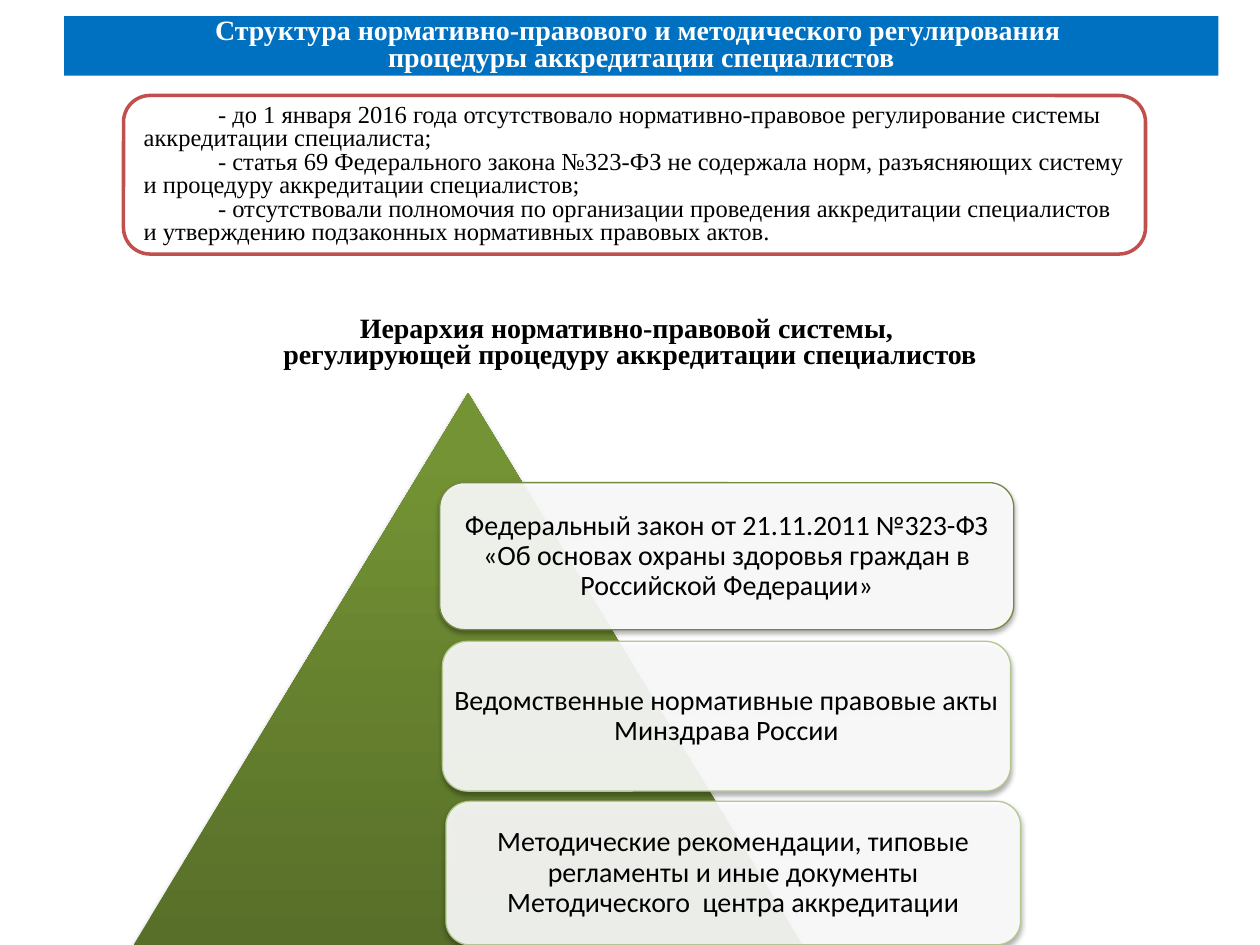
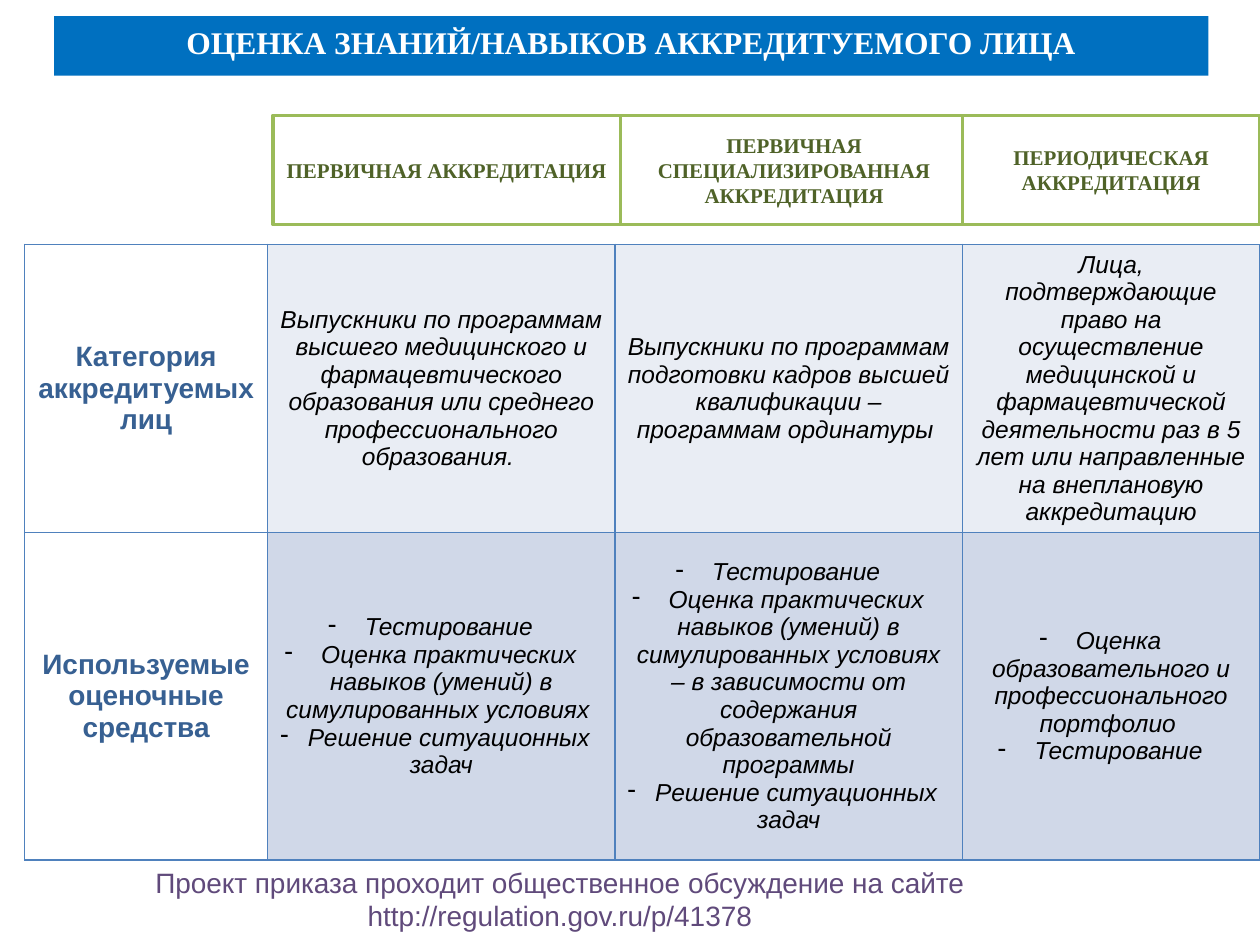
"""Builds two slides on the regulation and stages of specialist accreditation."""
from lxml.etree import SubElement
from pptx import Presentation
from pptx.dml.color import RGBColor
from pptx.enum.shapes import MSO_SHAPE as Form
from pptx.enum.text import MSO_ANCHOR as Anchor, PP_ALIGN as Align
from pptx.oxml import parse_xml
from pptx.oxml.ns import nsdecls, qn
from pptx.util import Pt

COLORS = {
    "white": "FFFFFF", "black": "000000", "band": "0070C0", "frame": "C0504D",
    "slope_dark": "586F29", "slope_light": "749334",
    "law": "738A42", "acts": "B3C791", "stage": "9BBB59", "stage_text": "4F6228",
    "grid": "4F81BD", "row_title": "376092", "people": "E9EDF4", "tools": "D0D8E8",
    "site": "604A7B",
}
TIMES = {"name": "Times New Roman", "size": Pt(16), "bold": True}
BODY = {"name": "Times New Roman", "size": Pt(14)}
LEVEL = {"name": "Calibri", "size": Pt(16)}
STAGE = {"name": "Times New Roman", "size": Pt(12), "bold": True}
ROW_TITLE = {"name": "Arial", "size": Pt(16), "bold": True}
CELL = {"name": "Arial", "size": Pt(14), "bold": False, "italic": True}
SITE = {"name": "Arial", "size": Pt(16)}


def rgb(color):
    return RGBColor.from_string(COLORS[color])


def line_xml(tag, color, width):
    return parse_xml(
        f'<a:{tag} {nsdecls("a")} w="{Pt(width)}"><a:solidFill>'
        f'<a:srgbClr val="{COLORS[color]}"/></a:solidFill></a:{tag}>')


class Deck:
    """Holds the shared style and the slide being filled."""

    def __init__(self, width, height):
        self.show = Presentation()
        self.show.slide_width, self.show.slide_height = Pt(width), Pt(height)
        self.slide = None

    def next_slide(self):
        self.slide = self.show.slides.add_slide(self.show.slide_layouts[6])

    def put_text(self, frame, paragraphs, style, color, align=Align.CENTER,
                 spacing=None, first_indent=None, bullet=None, outline=None):
        frame.word_wrap = True
        for number, words in enumerate(paragraphs):
            paragraph = frame.add_paragraph() if number else frame.paragraphs[0]
            layout = {"alignment": align, "line_spacing": spacing}
            for key, value in layout.items():
                setattr(paragraph, key, value)
            props = paragraph._p.get_or_add_pPr()
            if first_indent:
                props.set("marL", "0")
                props.set("indent", str(Pt(first_indent)))
            if bullet:
                SubElement(props, qn("a:buChar")).set("char", bullet)
            run = paragraph.add_run()
            run.text = words
            for key, value in style.items():
                setattr(run.font, key, value)
            run.font.color.rgb = rgb(color)
            if outline:
                run._r.get_or_add_rPr().insert(0, line_xml("ln", outline, 0.75))

    def shape(self, form, box, fill, line=None, width=0.75):
        shape = self.slide.shapes.add_shape(form, *map(Pt, box))
        shape.shadow.inherit = False
        shape.fill.solid()
        shape.fill.fore_color.rgb = rgb(fill)
        if line:
            shape.line.color.rgb = rgb(line)
            shape.line.width = Pt(width)
        else:
            shape.line.fill.background()
        shape.text_frame.vertical_anchor = Anchor.MIDDLE
        return shape

    def panel(self, form, box, paragraphs, style, color, fill="white",
              line=None, width=2, **layout):
        shape = self.shape(form, box, fill, line, width)
        self.put_text(shape.text_frame, paragraphs, style, color, **layout)

    def title(self, left, paragraphs, size):
        self.panel(Form.RECTANGLE, (left, 9.2, 659.5, 34), paragraphs,
                   {**TIMES, "size": Pt(size)}, "white", "band", spacing=0.8)

    def drop_shadow(self, shape):
        effects = shape._element.spPr.find(qn("a:effectLst"))
        effects.append(parse_xml(
            f'<a:outerShdw {nsdecls("a")} blurRad="{Pt(3.1)}" dist="{Pt(1.8)}" '
            'dir="5400000" rotWithShape="0"><a:srgbClr val="000000">'
            '<a:alpha val="35000"/></a:srgbClr></a:outerShdw>'))

    def pyramid(self, box):
        pyramid = self.shape(Form.ISOSCELES_TRIANGLE, box, "slope_dark")
        pyramid.fill.gradient()
        pyramid.fill.gradient_angle = 90
        shades = (("slope_dark", 0), ("slope_light", 0.9))
        for stop, (color, position) in zip(pyramid.fill.gradient_stops, shades):
            stop.color.rgb = rgb(color)
            stop.position = position
        self.drop_shadow(pyramid)

    def level(self, box, words, line):
        level = self.shape(Form.ROUNDED_RECTANGLE, box, "white", line)
        tint = level._element.spPr.find(qn("a:solidFill"))[0]
        SubElement(tint, qn("a:alpha")).set("val", "90000")
        self.drop_shadow(level)
        for side in ("left", "right", "top", "bottom"):
            setattr(level.text_frame, f"margin_{side}", Pt(1))
        self.put_text(level.text_frame, [words], LEVEL, "black", spacing=0.9)

    def table(self, left, top, columns, rows):
        heights = [height for height, *_ in rows]
        table = self.slide.shapes.add_table(
            len(rows), len(columns), Pt(left), Pt(top),
            Pt(sum(columns)), Pt(sum(heights))).table
        table.first_row = table.horz_banding = False
        for column, width in zip(table.columns, columns):
            column.width = Pt(width)
        for r, (height, fill, bullet, heading, *contents) in enumerate(rows):
            table.rows[r].height = Pt(height)
            self.cell(table.cell(r, 0), [heading], ROW_TITLE, "row_title", "white")
            for c, paragraphs in enumerate(contents, 1):
                self.cell(table.cell(r, c), paragraphs, CELL, "black", fill, bullet)

    def cell(self, cell, paragraphs, style, color, fill, bullet=None):
        cell.vertical_anchor = Anchor.MIDDLE
        cell.fill.solid()
        cell.fill.fore_color.rgb = rgb(fill)
        self.put_text(cell.text_frame, paragraphs, style, color, bullet=bullet)
        for place, side in enumerate("LRTB"):
            cell._tc.get_or_add_tcPr().insert(place, line_xml(f"ln{side}", "grid", 1))

    def caption(self, box, words, style, color):
        caption = self.slide.shapes.add_textbox(*map(Pt, box))
        self.put_text(caption.text_frame, [words], style, color)


def hierarchy_slide(deck):
    deck.next_slide()
    deck.pyramid((76.3, 224.6, 382.3, 315.4))
    deck.level((251.3, 275.8, 328, 84),
               "Федеральный закон от 21.11.2011 №323-ФЗ «Об основах охраны "
               "здоровья граждан в Российской Федерации»", "law")
    deck.level((252.8, 366.5, 324.7, 85.6),
               "Ведомственные нормативные правовые акты Минздрава России", "acts")
    deck.level((254.8, 457.9, 328.4, 82),
               "Методические рекомендации, типовые регламенты и иные документы "
               "Методического  центра аккредитации", "acts")
    deck.panel(Form.ROUNDED_RECTANGLE, (36.7, 167.8, 646.6, 56.9),
               ["Иерархия нормативно-правовой системы, ",
                "регулирующей процедуру аккредитации специалистов"],
               TIMES, "black", spacing=0.8)
    deck.title(36.7, ["Структура нормативно-правового и методического регулирования ",
                      "процедуры аккредитации специалистов"], 16)
    deck.panel(Form.ROUNDED_RECTANGLE, (70.6, 54.6, 584, 90.6),
               ["- до 1 января 2016 года отсутствовало нормативно-правовое "
                "регулирование системы аккредитации специалиста;",
                "- статья 69 Федерального закона №323-ФЗ не содержала норм, "
                "разъясняющих систему и процедуру аккредитации специалистов;",
                "- отсутствовали полномочия по организации проведения аккредитации "
                "специалистов  и утверждению подзаконных нормативных правовых актов."],
               BODY, "black", line="frame", align=Align.LEFT, spacing=0.8,
               first_indent=42.5)


def assessment_slide(deck):
    deck.next_slide()
    deck.title(31, ["ОЦЕНКА ЗНАНИЙ/НАВЫКОВ АККРЕДИТУЕМОГО ЛИЦА"], 18)
    stages = ((156, 198.5, "ПЕРВИЧНАЯ АККРЕДИТАЦИЯ"),
              (354.5, 198.5, "ПЕРВИЧНАЯ СПЕЦИАЛИЗИРОВАННАЯ АККРЕДИТАЦИЯ"),
              (550, 170, "ПЕРИОДИЧЕСКАЯ АККРЕДИТАЦИЯ"))
    for left, width, stage in stages:
        deck.panel(Form.RECTANGLE, (left, 65.9, width, 62.4), [stage], STAGE,
                   "stage_text", line="stage", outline="stage_text")
    testing = " Тестирование"
    skills = " Оценка практических навыков (умений) в симулированных условиях "
    cases = " Решение ситуационных задач"
    people = (
        157.7, "people", None, "Категория аккредитуемых лиц",
        ["Выпускники по программам высшего медицинского и фармацевтического "
         "образования или среднего профессионального образования. "],
        ["Выпускники по программам подготовки кадров высшей квалификации – "
         "программам ординатуры "],
        ["Лица, подтверждающие право на осуществление медицинской и "
         "фармацевтической деятельности раз в 5 лет или направленные на "
         "внеплановую аккредитацию"])
    tools = (
        187.2, "tools", "-", "Используемые оценочные средства",
        [testing, skills, cases],
        [testing, skills + "– в зависимости от содержания образовательной программы",
         cases],
        [" Оценка образовательного и профессионального портфолио ", testing])
    deck.table(14, 139.7, (139, 198.5, 198.5, 170), (people, tools))
    deck.caption((14, 491, 612, 46),
                 "Проект приказа проходит общественное обсуждение на сайте "
                 "http://regulation.gov.ru/p/41378", SITE, "site")


def main():
    deck = Deck(720, 540)
    hierarchy_slide(deck)
    assessment_slide(deck)
    deck.show.save("out.pptx")


if __name__ == "__main__":
    main()
